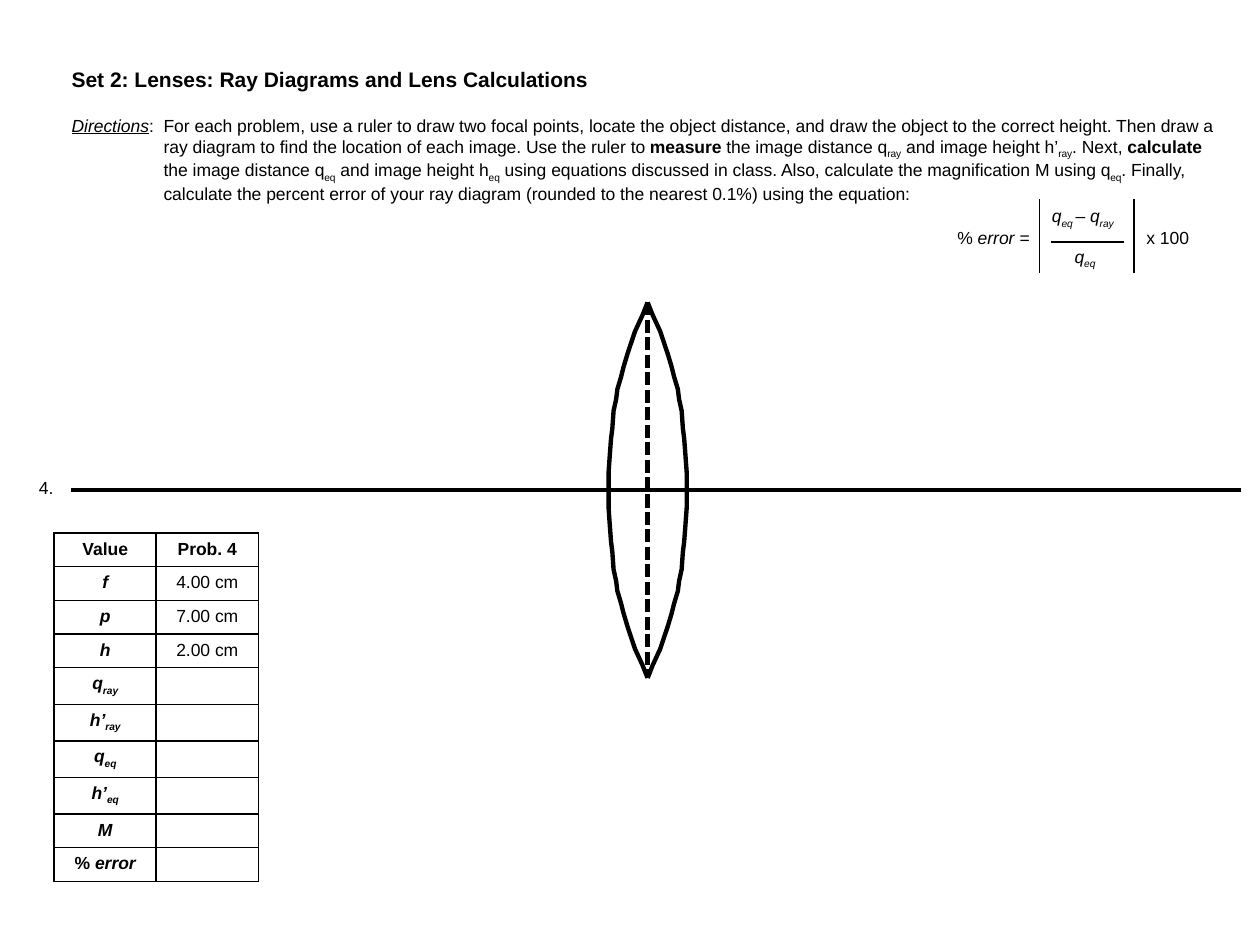
import pptx
import pptx.util
import pptx.dml.color
import pptx.enum.dml
import pptx.enum.shapes
import pptx.enum.text
import pptx.oxml
import pptx.oxml.ns
import lxml.etree

Inches = pptx.util.Inches
Pt = pptx.util.Pt
qn = pptx.oxml.ns.qn
HUES = {"ink": "000000"}
INK = pptx.dml.color.RGBColor.from_string(HUES["ink"])
FONT = "Arial"

TITLE = "Set 2: Lenses: Ray Diagrams and Lens Calculations"
STEPS = [
    [("Directions", "iu"), (":\tFor each problem, use a ruler to draw two focal points, "
     "locate the object distance, and draw the object to the correct height. Then draw a", "")],
    [("ray diagram to find the location of each image. Use the ruler to ", ""), ("measure", "b"),
     (" the image distance q", ""), ("ray", "s"), (" and image height h’", ""), ("ray", "s"),
     (". Next, ", ""), ("calculate", "b")],
    [("the image distance q", ""), ("eq", "s"), (" and image height h", ""), ("eq", "s"),
     (" using equations discussed in class. Also, calculate the magnification M using q", ""),
     ("eq", "s"), (". Finally,", "")],
    [("calculate the percent error of your ray diagram "
      "(rounded to the nearest 0.1%) using the equation:", "")],
]
ROWS = [
    ([("Value", "b")], [("Prob. 4", "b")]),
    ([("f", "bi")], [("4.00 cm", "")]),
    ([("p", "bi")], [("7.00 cm", "")]),
    ([("h", "bi")], [("2.00 cm", "")]),
    ([("q", "bi"), ("ray", "bis")], []),
    ([("h’", "bi"), ("ray", "bis")], []),
    ([("q", "bi"), ("eq", "bis")], []),
    ([("h’", "bi"), ("eq", "bis")], []),
    ([("M", "bi")], []),
    ([("% ", "b"), ("error", "bi")], []),
]
CURVE = [(0, 0), (0.04, 0.1), (0.1, 0.23), (0.16, 0.41), (0.19, 0.51), (0.21, 0.59),
         (0.24, 0.69), (0.25, 0.77), (0.27, 0.86), (0.28, 1), (0.29, 1.08), (0.3, 1.21),
         (0.31, 1.35), (0.31, 1.49)]


def write(para, parts, size=10):
    for text, style in parts:
        run = para.add_run()
        run.text = text
        font = run.font
        font.name, font.size = FONT, Pt(size)
        font.color.rgb = INK
        font.bold, font.italic, font.underline = ("b" in style, "i" in style, "u" in style)
        if "s" in style:
            run._r.get_or_add_rPr().set("baseline", "-25000")


def label(slide, box, parts, size=10):
    shape = slide.shapes.add_textbox(*map(Inches, box))
    frame = shape.text_frame
    frame.word_wrap = False
    write(frame.paragraphs[0], parts, size)


def rule(slide, start, end, width, dash=None):
    line = slide.shapes.add_connector(
        pptx.enum.shapes.MSO_CONNECTOR.STRAIGHT, *map(Inches, start + end))
    line.line.color.rgb = INK
    line.line.width = Pt(width)
    if dash:
        line.line.dash_style = dash
    lxml.etree.SubElement(line._element.spPr, qn("a:effectLst"))


def guide(slide, box):
    frame = slide.shapes.add_textbox(*map(Inches, box)).text_frame
    frame.word_wrap = True
    frame.margin_right = 0
    for num, parts in enumerate(STEPS):
        para = frame.add_paragraph() if num else frame.paragraphs[0]
        props = para._p.get_or_add_pPr()
        props.set("marL", str(Inches(0.73)))
        props.set("indent", str(0 if num else -Inches(0.73)))
        write(para, parts)


def error(slide, box):
    x, y, w, h = box
    label(slide, (x, y + 0.17, 0.82, 0.27), [("%", ""), (" error =", "i")])
    label(slide, (x + 1.5, y + 0.17, 0.54, 0.27), [("x 100", "")])
    label(slide, (x + 0.75, y, 0.76, 0.27),
          [("q", "i"), ("eq ", "is"), ("– q", "i"), ("ray", "is")])
    label(slide, (x + 0.93, y + 0.32, 0.38, 0.27), [("q", "i"), ("eq", "is")])
    for side in (x + 0.75, x + 1.5):
        rule(slide, (side, y), (side, y + h), 0.75)
    rule(slide, (x + 0.84, y + 0.34), (x + 1.42, y + 0.34), 0.75)


def lens(slide, box):
    x, y, w, h = box
    mid = x + w / 2
    for side in (1, -1):
        for top, way in ((y, 1), (y + h, -1)):
            spots = [(Inches(mid + side * dx), Inches(top + way * dy)) for dx, dy in CURVE]
            path = slide.shapes.build_freeform(*spots[0])
            path.add_line_segments(spots[1:], close=False)
            arc = path.convert_to_shape()
            arc.shadow.inherit = False
            arc.fill.background()
            arc.line.color.rgb = INK
            arc.line.width = Pt(2.5)
    rule(slide, (mid, y), (mid, y + h), 2.5, pptx.enum.dml.MSO_LINE.SQUARE_DOT)


def edge(cell):
    props = cell._tc.get_or_add_tcPr()
    for spot, side in enumerate(("lnL", "lnR", "lnT", "lnB")):
        line = pptx.oxml.parse_xml(
            f'<a:{side} xmlns:a="http://schemas.openxmlformats.org/drawingml/2006/main" '
            f'w="{Pt(1)}"><a:solidFill><a:srgbClr val="{HUES["ink"]}"/></a:solidFill></a:{side}>')
        props.insert(spot, line)


def grid(slide, box):
    table = slide.shapes.add_table(len(ROWS), 2, *map(Inches, box)).table
    table.first_row = table.horz_banding = False
    for col in table.columns:
        col.width = Inches(box[2] / 2)
    for row, pair in zip(table.rows, ROWS):
        row.height = Inches(0.25)
        for cell, parts in zip(row.cells, pair):
            cell.fill.background()
            edge(cell)
            para = cell.text_frame.paragraphs[0]
            para.alignment = pptx.enum.text.PP_ALIGN.CENTER
            write(para, parts)
            if not parts:
                lxml.etree.SubElement(para._p, qn("a:endParaRPr")).set("sz", "1000")


def main():
    deck = pptx.Presentation()
    deck.slide_width, deck.slide_height = Inches(10), Inches(7.5)
    slide = deck.slides.add_slide(deck.slide_layouts[6])
    rule(slide, (9.85, 3.89), (0.56, 3.89), 2.5)
    label(slide, (0.47, 0.48, 4.34, 0.3), [(TITLE, "b")], 12)
    grid(slide, (0.43, 4.23, 1.62, 2.5))
    label(slide, (0.21, 3.74, 0.32, 0.27), [("4.", "")])
    lens(slide, (4.83, 2.4, 0.62, 2.98))
    guide(slide, (0.47, 0.86, 9.33, 0.77))
    error(slide, (7.5, 1.58, 2.04, 0.59))
    deck.save("out.pptx")


if __name__ == "__main__":
    main()
